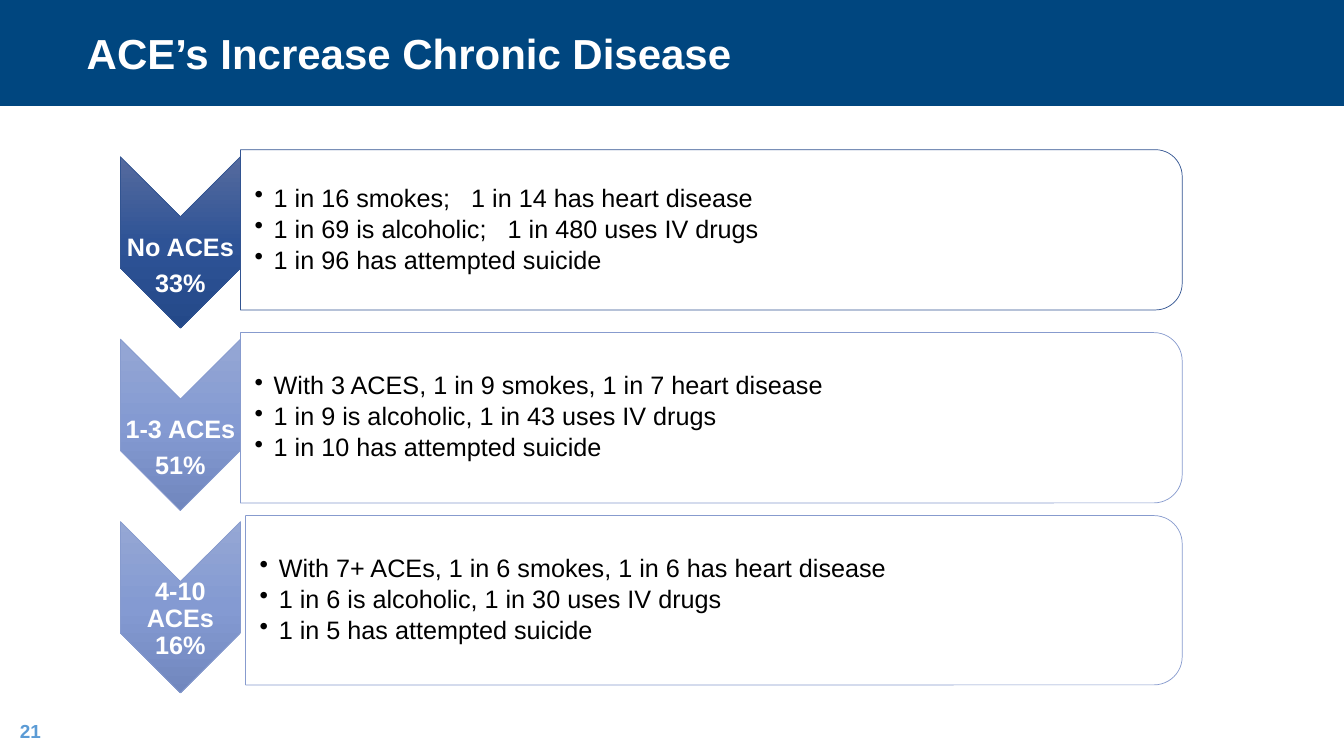
import lxml.etree
import pptx
import pptx.dml.color
import pptx.enum.shapes
import pptx.enum.text
import pptx.oxml
import pptx.oxml.ns
import pptx.util

COLORS = {
    "band": "00467F",
    "white": "FFFFFF",
    "black": "000000",
    "number": "5B9BD5",
    "dark_line": "325491",
    "light_line": "879BCE",
}
DARK_GRADIENT = ("566B9E", "2E5396", "244989")
LIGHT_GRADIENT = ("95A7D4", "849AD2", "7187BE")
FONT = "Arial"
SLIDE_WIDTH = pptx.util.Inches(13.33)
SLIDE_HEIGHT = pptx.util.Inches(7.5)

# Shares of the slide in percent
CHEVRON_LEFT, CHEVRON_TOP, CHEVRON_WIDTH, CHEVRON_HEIGHT = 8.96, 20.73, 8.93, 22.67
CHEVRON_STEP = 24.13
PANEL_TOP, PANEL_STEP, PANEL_RIGHT = 19.8, 24.2, 87.96

ACE_GROUPS = [
    {
        "label": ["No ACEs", "33%"], "label_drop": 10.13, "label_gap": 6.3,
        "gradient": DARK_GRADIENT, "line": "dark_line",
        "panel_left": 17.89, "panel_height": 21.2,
        "facts": ["1 in 16 smokes; 1 in 14 has heart disease",
                  "1 in 69 is alcoholic; 1 in 480 uses IV drugs",
                  "1 in 96 has attempted suicide"],
    },
    {
        "label": ["1-3 ACEs", "51%"], "label_drop": 10.13, "label_gap": 6.3,
        "gradient": LIGHT_GRADIENT, "line": "light_line",
        "panel_left": 17.89, "panel_height": 22.53,
        "facts": ["With 3 ACES, 1 in 9 smokes, 1 in 7 heart disease",
                  "1 in 9 is alcoholic, 1 in 43 uses IV drugs",
                  "1 in 10 has attempted suicide"],
    },
    {
        "label": ["4-10 ACEs", "16%"], "label_drop": 7.4, "label_gap": 0,
        "gradient": LIGHT_GRADIENT, "line": "light_line",
        "panel_left": 18.27, "panel_height": 22.4,
        "facts": ["With 7+ ACEs, 1 in 6 smokes, 1 in 6 has heart disease",
                  "1 in 6 is alcoholic, 1 in 30 uses IV drugs",
                  "1 in 5 has attempted suicide"],
    },
]


def across(percent):
    return round(SLIDE_WIDTH * percent / 100)


def down(percent):
    return round(SLIDE_HEIGHT * percent / 100)


def rgb(name):
    return pptx.dml.color.RGBColor.from_string(COLORS[name])


def format_runs(paragraph, size, color, bold=False):
    for run in paragraph.runs:
        run.font.name = FONT
        run.font.size = pptx.util.Pt(size)
        run.font.bold = bold
        run.font.color.rgb = rgb(color)


def add_turned_shape(slide, kind, box, line_color):
    """Add a shape turned by 90 degrees that covers the given box on the slide."""
    left, top, width, height = box
    shift = (width - height) // 2
    shape = slide.shapes.add_shape(kind, left + shift, top - shift, height, width)
    shape.rotation = 90
    shape.shadow.inherit = False
    shape.line.color.rgb = rgb(line_color)
    shape.line.width = pptx.util.Pt(0.5)
    return shape


def fill_downward_gradient(shape, stops):
    shape.fill.gradient()
    gradient = shape.fill._xPr.find(pptx.oxml.ns.qn("a:gradFill"))
    gradient.set("rotWithShape", "0")
    shape.fill.gradient_angle = 270
    stop_list = gradient.find(pptx.oxml.ns.qn("a:gsLst"))
    for stop in list(stop_list):
        stop_list.remove(stop)
    for index, color in enumerate(stops):
        stop = lxml.etree.SubElement(
            stop_list, pptx.oxml.ns.qn("a:gs"), pos=str(index * 50000))
        lxml.etree.SubElement(stop, pptx.oxml.ns.qn("a:srgbClr"), val=color)


def add_text(slide, box, lines, left_inset=0.01, anchor="TOP"):
    frame = slide.shapes.add_textbox(*box).text_frame
    frame.word_wrap = True
    frame.vertical_anchor = pptx.enum.text.MSO_ANCHOR[anchor]
    frame.margin_left = pptx.util.Inches(left_inset)
    frame.margin_top = frame.margin_right = frame.margin_bottom = pptx.util.Inches(0.01)
    frame.text = "\n".join(lines)
    return frame.paragraphs


def add_chevron(slide, row, group):
    left, width = across(CHEVRON_LEFT), across(CHEVRON_WIDTH)
    top = CHEVRON_TOP + row * CHEVRON_STEP
    chevron = add_turned_shape(
        slide, pptx.enum.shapes.MSO_SHAPE.CHEVRON,
        (left, down(top), width, down(CHEVRON_HEIGHT)), group["line"])
    fill_downward_gradient(chevron, group["gradient"])
    label_box = (left, down(top + group["label_drop"]), width, down(9))
    for paragraph in add_text(slide, label_box, group["label"]):
        paragraph.alignment = pptx.enum.text.PP_ALIGN.CENTER
        paragraph.line_spacing = 0.9
        paragraph.space_after = pptx.util.Pt(group["label_gap"])
        format_runs(paragraph, 18, "white", bold=True)


def add_bullet(paragraph):
    properties = paragraph._p.get_or_add_pPr()
    indent = pptx.util.Inches(0.19)
    properties.set("marL", str(indent))
    properties.set("indent", str(-indent))
    lxml.etree.SubElement(properties, pptx.oxml.ns.qn("a:buChar"), char="•")


def widen_gap_after_semicolon(paragraph):
    before, gap, after = paragraph.text.partition("; ")
    if not gap:
        return
    paragraph.text = before + ";"
    space = paragraph.add_run()
    space.text = " "
    space.font._element.set("spc", "1000")
    paragraph.add_run().text = after


def add_panel(slide, row, group):
    left = across(group["panel_left"])
    box = (left, down(PANEL_TOP + row * PANEL_STEP),
           across(PANEL_RIGHT) - left, down(group["panel_height"]))
    panel = add_turned_shape(
        slide, pptx.enum.shapes.MSO_SHAPE.ROUND_2_SAME_RECTANGLE, box, group["line"])
    panel.fill.solid()
    panel.fill.fore_color.rgb = rgb("white")
    color = panel.fill._xPr.find(".//" + pptx.oxml.ns.qn("a:srgbClr"))
    lxml.etree.SubElement(color, pptx.oxml.ns.qn("a:alpha"), val="90000")
    for paragraph in add_text(slide, box, group["facts"], 0.14, "MIDDLE"):
        paragraph.line_spacing = 0.9
        paragraph.space_after = pptx.util.Pt(2.7)
        add_bullet(paragraph)
        widen_gap_after_semicolon(paragraph)
        format_runs(paragraph, 18, "black")


def set_title(slide, text):
    title = slide.shapes.title
    title.left, title.top, title.width, title.height = 0, 0, SLIDE_WIDTH, down(14)
    title.fill.solid()
    title.fill.fore_color.rgb = rgb("band")
    frame = title.text_frame
    frame.text = text
    frame.margin_left = across(6.45)
    frame.vertical_anchor = pptx.enum.text.MSO_ANCHOR.MIDDLE
    frame.paragraphs[0].alignment = pptx.enum.text.PP_ALIGN.LEFT
    format_runs(frame.paragraphs[0], 30, "white", bold=True)


def add_page_number(slide, number):
    box = (across(0.75), down(95), across(4), down(5))
    paragraph = add_text(slide, box, [number], 0.1)[0]
    format_runs(paragraph, 13.5, "number", bold=True)


def main():
    presentation = pptx.Presentation()
    presentation.slide_width = SLIDE_WIDTH
    presentation.slide_height = SLIDE_HEIGHT
    slide = presentation.slides.add_slide(presentation.slide_layouts[5])
    set_title(slide, "ACE’s Increase Chronic Disease")
    for row, group in enumerate(ACE_GROUPS):
        add_chevron(slide, row, group)
        add_panel(slide, row, group)
    add_page_number(slide, "21")
    presentation.save("out.pptx")


if __name__ == "__main__":
    main()
